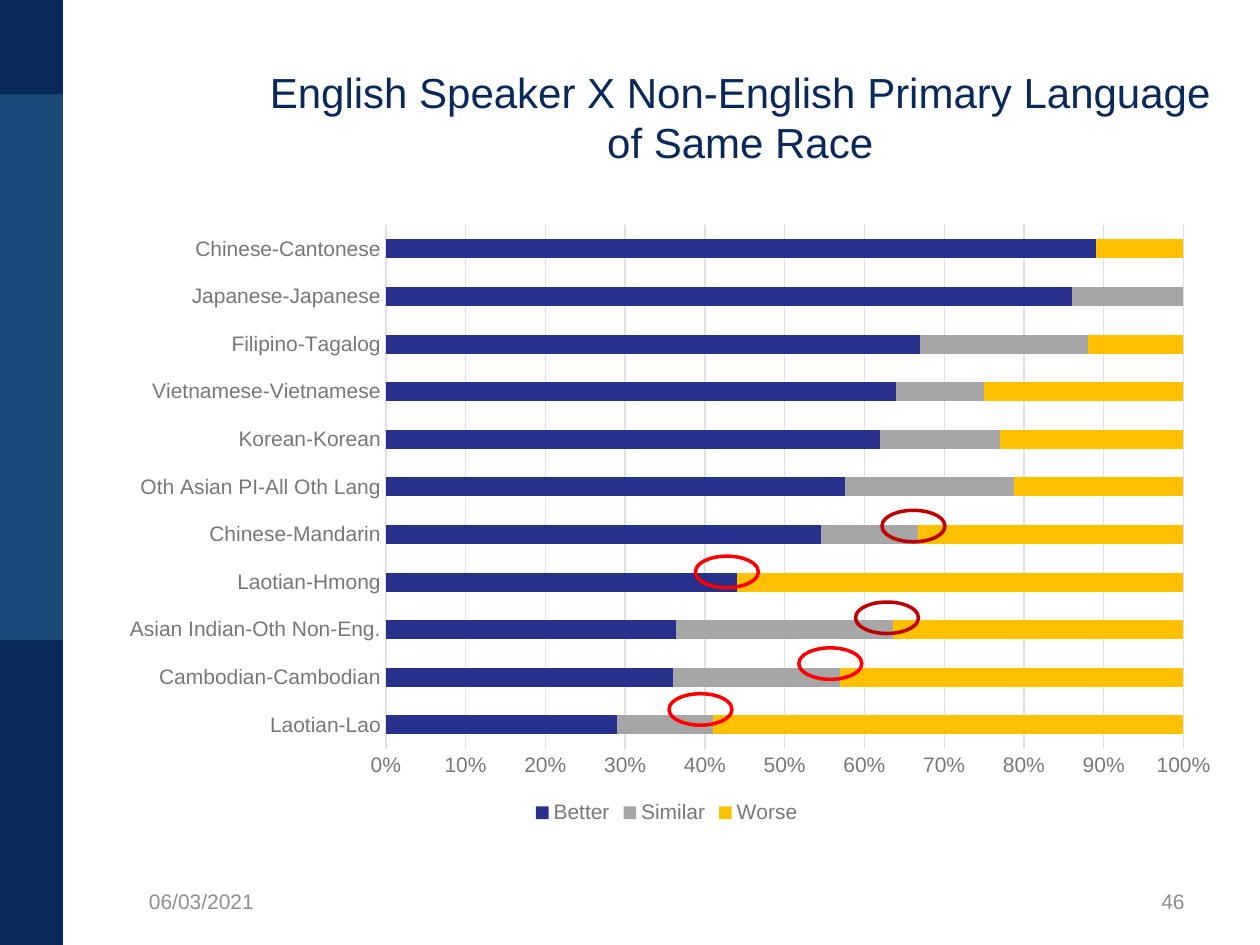
"""Build a slide comparing English speakers with same-race speakers of other languages."""
from typing import NamedTuple

from lxml.etree import SubElement
from pptx import Presentation as Deck
from pptx.chart.data import CategoryChartData as Data
from pptx.dml.color import RGBColor as Rgb
from pptx.enum.chart import XL_CHART_TYPE as Kind, XL_LEGEND_POSITION as Spot, XL_TICK_MARK as Tick
from pptx.enum.shapes import MSO_SHAPE as Form
from pptx.enum.text import MSO_ANCHOR as Anchor, PP_ALIGN as Align
from pptx.oxml.ns import qn
from pptx.util import Pt

FACE = "Arial"
HUES = {
    "navy": "0A295B", "blue": "1A4A78", "better": "27318B", "similar": "A6A6A6",
    "worse": "FFC000", "label": "777777", "grid": "E0E0E0", "text": "2E2E2E",
    "foot": "8F8F8F", "dark": "C00000", "red": "FF0000",
}


class Band(NamedTuple):
    top: float
    high: float
    hue: str


class Ring(NamedTuple):
    left: float
    hue: str


class Row(NamedTuple):
    name: str
    better: int
    similar: int
    worse: int


class Note(NamedTuple):
    text: str
    left: float
    align: Align


BANDS = [Band(0, 540, "blue"), Band(0, 54, "navy"), Band(365.76, 174.24, "navy")]
RINGS = [Ring(504, "dark"), Ring(397.4, "red"), Ring(488.9, "dark"),
         Ring(456.5, "red"), Ring(382.3, "red")]
ROWS = [
    Row("Laotian-Lao", 29, 12, 59),
    Row("Cambodian-Cambodian", 36, 21, 43),
    Row("Asian Indian-Oth Non-Eng.", 36, 27, 36),
    Row("Laotian-Hmong", 44, 0, 56),
    Row("Chinese-Mandarin", 54, 12, 33),
    Row("Oth Asian PI-All Oth Lang", 57, 21, 21),
    Row("Korean-Korean", 62, 15, 23),
    Row("Vietnamese-Vietnamese", 64, 11, 25),
    Row("Filipino-Tagalog", 67, 21, 12),
    Row("Japanese-Japanese", 86, 14, 0),
    Row("Chinese-Cantonese", 89, 0, 11),
]
NOTES = [Note("06/03/2021", 78, Align.LEFT), Note("46", 516, Align.RIGHT)]


def tint(hue: str) -> Rgb:
    return Rgb.from_string(HUES[hue])


def style(font, size: float, hue: str) -> None:
    font.name, font.size = FACE, Pt(size)
    font.color.rgb = tint(hue)


def write(shape, text: str, *, size: float, hue: str, align: Align) -> None:
    frame = shape.text_frame
    frame.word_wrap = True
    frame.vertical_anchor = Anchor.MIDDLE
    frame.text = text
    para = frame.paragraphs[0]
    para.alignment = align
    style(para.runs[0].font, size, hue)


def draw_band(slide, band: Band) -> None:
    box = slide.shapes.add_shape(Form.RECTANGLE, Pt(0), Pt(band.top), Pt(36), Pt(band.high))
    box.shadow.inherit = False
    box.fill.solid()
    box.fill.fore_color.rgb = tint(band.hue)
    box.line.fill.background()


def draw_ring(slide, ring: Ring, top: float) -> None:
    oval = slide.shapes.add_shape(Form.OVAL, Pt(ring.left), Pt(top), Pt(36), Pt(18))
    oval.shadow.inherit = False
    oval.fill.background()
    oval.line.color.rgb = tint(ring.hue)
    oval.line.width = Pt(2)


def rule(line) -> None:
    line.color.rgb = tint("grid")
    line.width = Pt(0.75)


def place_plot(chart) -> None:
    area = chart.plots[0]._element.getparent()
    for old in area.findall(qn("c:layout")):
        area.remove(old)
    lay = SubElement(area, qn("c:layout"))
    area.insert(0, lay)
    man = SubElement(lay, qn("c:manualLayout"))
    parts = {"layoutTarget": "inner", "xMode": "edge", "yMode": "edge",
             "x": "0.25", "y": "0.02", "w": "0.71", "h": "0.85"}
    for tag, val in parts.items():
        SubElement(man, qn(f"c:{tag}")).set("val", val)


def draw_chart(slide) -> None:
    data = Data()
    data.categories = [row.name for row in ROWS]
    for key in ("better", "similar", "worse"):
        data.add_series(key.title(), [getattr(row, key) for row in ROWS])
    frame = slide.shapes.add_chart(
        Kind.BAR_STACKED_100, Pt(60), Pt(121.7), Pt(642), Pt(352), data)
    chart = frame.chart
    style(chart.font, 10, "text")
    chart.has_title = False
    chart.has_legend = True
    chart.legend.position = Spot.BOTTOM
    chart.legend.include_in_layout = False
    style(chart.legend.font, 12, "label")
    plot = chart.plots[0]
    plot.gap_width, plot.overlap = 150, 100
    plot.vary_by_categories = False
    for item in plot.series:
        item.format.fill.solid()
        item.format.fill.fore_color.rgb = tint(item.name.lower())
    cats, vals = chart.category_axis, chart.value_axis
    for axis in (cats, vals):
        axis.major_tick_mark = axis.minor_tick_mark = Tick.NONE
        style(axis.tick_labels.font, 12, "label")
    cats.has_major_gridlines = False
    rule(cats.format.line)
    vals.has_major_gridlines = True
    rule(vals.major_gridlines.format.line)
    vals.format.line.fill.background()
    vals.minimum_scale, vals.maximum_scale, vals.major_unit = 0, 1, 0.1
    vals.tick_labels.number_format = "0%"
    vals.tick_labels.number_format_is_linked = False
    place_plot(chart)


def main() -> None:
    deck = Deck()
    deck.slide_width, deck.slide_height = Pt(720), Pt(540)
    slide = deck.slides.add_slide(deck.slide_layouts[5])
    for band in BANDS:
        draw_band(slide, band)
    title = slide.shapes.title
    title.left, title.top, title.width, title.height = Pt(144), Pt(21.6), Pt(558), Pt(90)
    write(title, "English Speaker X Non-English Primary Language of Same Race",
          size=24, hue="navy", align=Align.CENTER)
    draw_chart(slide)
    for rank, ring in enumerate(RINGS):
        draw_ring(slide, ring, 291.6 + 26.2 * rank)
    for note in NOTES:
        box = slide.shapes.add_textbox(Pt(note.left), Pt(500.5), Pt(168), Pt(28.8))
        write(box, note.text, size=12, hue="foot", align=note.align)
    deck.save("out.pptx")


if __name__ == "__main__":
    main()
